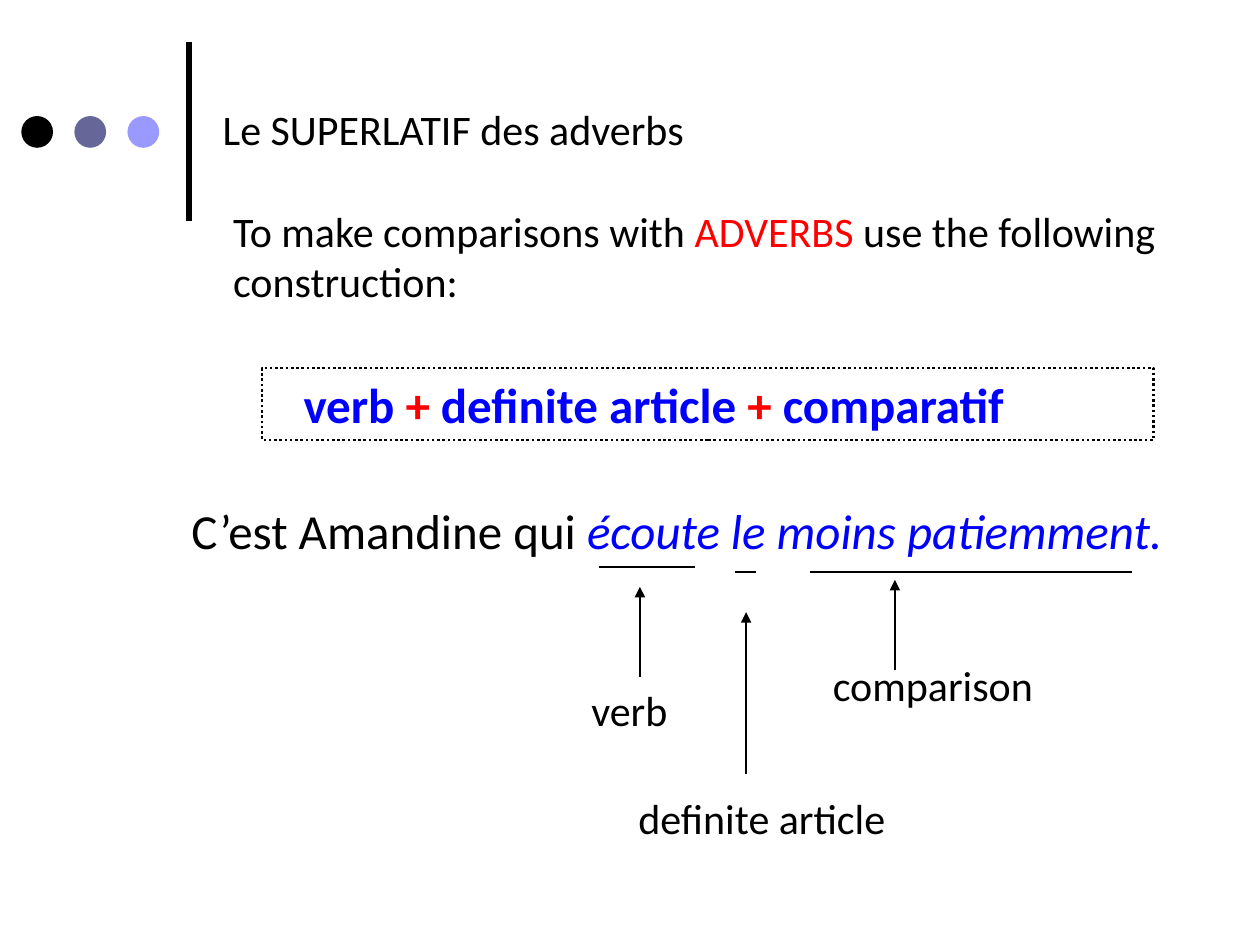
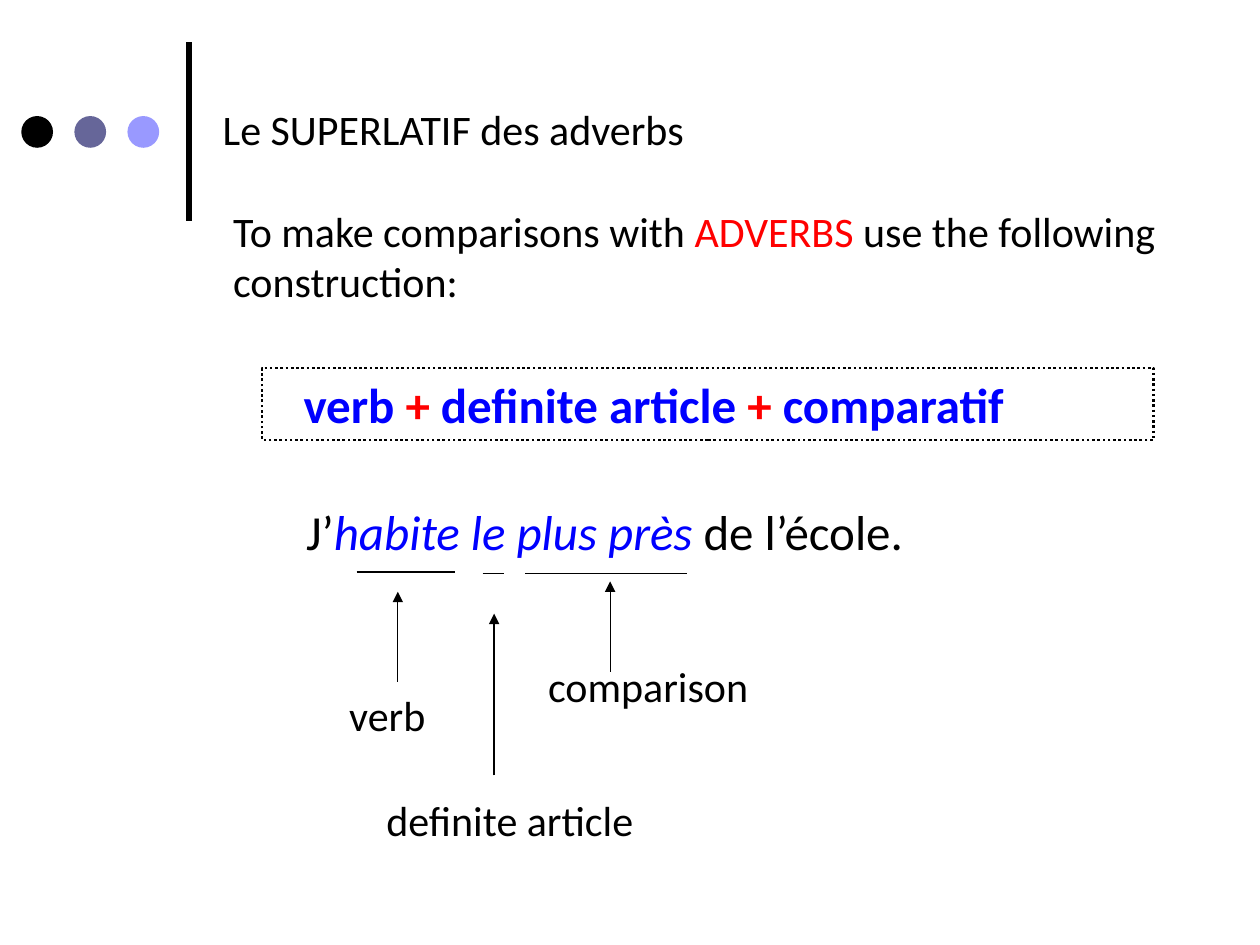
import dataclasses

import lxml.etree
import pptx
import pptx.dml.color
import pptx.enum.dml
import pptx.enum.shapes
import pptx.enum.text
import pptx.oxml.ns
import pptx.util
from pptx.util import Cm

COLOURS = {
    "black": "000000",
    "slate": "666699",
    "lavender": "9999FF",
    "red": "FF0000",
    "blue": "0000FF",
    "white": "FFFFFF",
}
FONT = "Calibri"
BODY_SIZE = 24
EXAMPLE_SIZE = 28

DOT_COLOURS = ("black", "slate", "lavender")
DOT_LEFT, DOT_TOP, DOT_SIZE, DOT_STEP = 0.43, 2.34, 0.64, 1.07


@dataclasses.dataclass(frozen=True)
class Box:
    left: float
    top: float
    width: float
    height: float


@dataclasses.dataclass(frozen=True)
class Phrase:
    """A stretch of text in one colour and slant."""
    text: str
    colour: str = "black"
    italic: bool = False


@dataclasses.dataclass(frozen=True)
class Role:
    """A grammatical role; offsets run from the start of its underline."""
    label: str
    label_across: float
    label_down: float
    label_width: float
    arrow_across: float
    arrow_tail: float
    arrow_head: float


@dataclasses.dataclass(frozen=True)
class Underline:
    role: Role
    start: float
    end: float
    height: float


@dataclasses.dataclass(frozen=True)
class Example:
    box: Box
    phrases: tuple[Phrase, ...]
    underlines: tuple[Underline, ...]


TITLE_BOX = Box(4.24, 1.96, 21.16, 1.27)
INTRO_BOX = Box(4.45, 4.01, 19.69, 2.31)
FORMULA_BOX = Box(5.28, 7.42, 17.98, 1.45)
FORMULA_INDENT = 0.84

TITLE = (Phrase("Le SUPERLATIF des adverbs"),)
INTRO = (
    Phrase("To make comparisons with "),
    Phrase("ADVERBS ", "red"),
    Phrase("use the following construction:"),
)
FORMULA = (
    Phrase("verb ", "blue"),
    Phrase("+", "red"),
    Phrase(" definite article ", "blue"),
    Phrase("+ ", "red"),
    Phrase("comparatif", "blue"),
)

VERB = Role("verb", -0.4, 2.25, 2.82, 0.83, 2.21, 0.4)
ARTICLE = Role("definite article", -2.19, 4.33, 6.3, 0.23, 4.07, 0.81)
COMPARISON = Role("comparison", 0.21, 1.64, 6.3, 1.71, 1.98, 0.16)

EXAMPLES = (
    Example(
        Box(3.61, 9.96, 20.8, 1.45),
        (Phrase("C’est Amandine qui "),
         Phrase("écoute le moins patiemment.", "blue", True)),
        (Underline(VERB, 12.07, 14.02, 11.43),
         Underline(ARTICLE, 14.81, 15.24, 11.53),
         Underline(COMPARISON, 16.33, 22.83, 11.53)),
    ),
    Example(
        Box(5.92, 9.98, 19.05, 1.45),
        (Phrase("J’"),
         Phrase("habite le plus près ", "blue", True),
         Phrase("de l’école.")),
        (Underline(VERB, 7.19, 9.17, 11.53),
         Underline(ARTICLE, 9.73, 10.16, 11.56),
         Underline(COMPARISON, 10.59, 13.84, 11.56)),
    ),
)


def rgb(name: str) -> pptx.dml.color.RGBColor:
    return pptx.dml.color.RGBColor.from_string(COLOURS[name])


def lengths(box: Box) -> tuple[Cm, ...]:
    return tuple(Cm(value) for value in dataclasses.astuple(box))


def write_text(shape, phrases: tuple[Phrase, ...], size: int,
               bold: bool = False) -> None:
    frame = shape.text_frame
    frame.word_wrap = True
    frame.vertical_anchor = pptx.enum.text.MSO_ANCHOR.TOP
    paragraph = frame.paragraphs[0]
    paragraph.alignment = pptx.enum.text.PP_ALIGN.LEFT
    paragraph.font.name = FONT
    paragraph.font.size = pptx.util.Pt(size)
    paragraph.font.bold = bold
    for phrase in phrases:
        run = paragraph.add_run()
        run.text = phrase.text
        run.font.color.rgb = rgb(phrase.colour)
        run.font.italic = phrase.italic


def add_text(slide, box: Box, phrases: tuple[Phrase, ...],
             size: int = BODY_SIZE) -> None:
    write_text(slide.shapes.add_textbox(*lengths(box)), phrases, size)


def add_line(slide, start: tuple[float, float], end: tuple[float, float],
             width: float = 0.75, arrow: bool = False) -> None:
    connector = slide.shapes.add_connector(
        pptx.enum.shapes.MSO_CONNECTOR.STRAIGHT,
        *(Cm(value) for value in start + end))
    connector.line.color.rgb = rgb("black")
    connector.line.width = pptx.util.Pt(width)
    if arrow:
        lxml.etree.SubElement(connector.get_or_add_ln(),
                              pptx.oxml.ns.qn("a:tailEnd"), type="triangle")
    lxml.etree.SubElement(connector.element.spPr, pptx.oxml.ns.qn("a:effectLst"))


def add_frame(slide) -> None:
    """Draw the vertical bar, the three dots and the title."""
    add_line(slide, (3.81, 4.45), (3.81, 0.84), width=3)
    for index, colour in enumerate(DOT_COLOURS):
        box = Box(DOT_LEFT + index * DOT_STEP, DOT_TOP, DOT_SIZE, DOT_SIZE)
        dot = slide.shapes.add_shape(
            pptx.enum.shapes.MSO_SHAPE.OVAL, *lengths(box))
        dot.shadow.inherit = False
        dot.fill.solid()
        dot.fill.fore_color.rgb = rgb(colour)
        dot.line.fill.background()
    add_text(slide, TITLE_BOX, TITLE)


def add_formula(slide) -> None:
    shape = slide.shapes.add_shape(
        pptx.enum.shapes.MSO_SHAPE.RECTANGLE, *lengths(FORMULA_BOX))
    shape.shadow.inherit = False
    shape.fill.background()
    shape.line.color.rgb = rgb("black")
    shape.line.width = pptx.util.Pt(1.5)
    shape.line.dash_style = pptx.enum.dml.MSO_LINE.ROUND_DOT
    shape.text_frame.margin_left = Cm(FORMULA_INDENT)
    write_text(shape, FORMULA, EXAMPLE_SIZE, bold=True)


def add_callout(slide, underline: Underline) -> None:
    """Underline some words and point at them from the name of their role."""
    role, start, height = underline.role, underline.start, underline.height
    add_text(slide, Box(start + role.label_across, height + role.label_down,
                        role.label_width, 1.27), (Phrase(role.label),))
    arrow_x = start + role.arrow_across
    add_line(slide, (arrow_x, height + role.arrow_tail),
             (arrow_x, height + role.arrow_head), arrow=True)
    add_line(slide, (start, height), (underline.end, height))


def add_example_slide(presentation, example: Example) -> None:
    slide = presentation.slides.add_slide(presentation.slide_layouts[6])
    slide.background.fill.solid()
    slide.background.fill.fore_color.rgb = rgb("white")
    add_frame(slide)
    add_text(slide, INTRO_BOX, INTRO)
    add_formula(slide)
    add_text(slide, example.box, example.phrases, EXAMPLE_SIZE)
    for underline in example.underlines:
        add_callout(slide, underline)


def main() -> None:
    presentation = pptx.Presentation()
    presentation.slide_width = Cm(25.4)
    presentation.slide_height = Cm(19.05)
    for example in EXAMPLES:
        add_example_slide(presentation, example)
    presentation.save("out.pptx")


if __name__ == "__main__":
    main()
